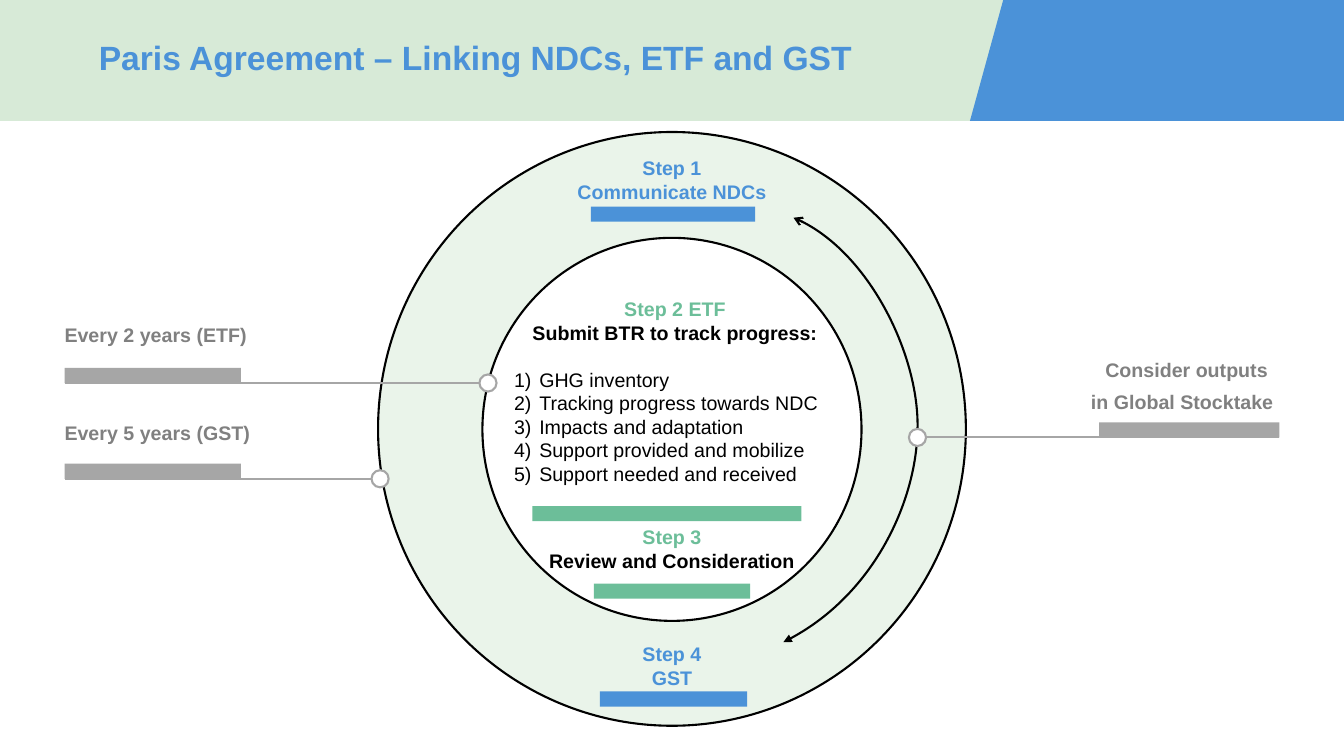
from lxml import etree
from pptx import Presentation, util as u
from pptx.dml.color import RGBColor
from pptx.enum import shapes, text
from pptx.oxml.ns import qn

WIDTH, HEIGHT, HEADER = 13.33, 7.5, 1.2
CENTER = WIDTH / 2
BAR, DOT = 0.15, 0.17
BLUE, GREEN, PALE = "4B92D8", "6CBE99", "D7EAD7"
GRAY, LABEL, BLACK, WHITE = "A6A6A6", "808080", "000000", "FFFFFF"
LEFT, MID, RIGHT = text.PP_ALIGN.LEFT, text.PP_ALIGN.CENTER, text.PP_ALIGN.RIGHT
RECT, OVAL = shapes.MSO_SHAPE.RECTANGLE, shapes.MSO_SHAPE.OVAL

TITLE = "Paris Agreement – Linking NDCs, ETF and GST"
BANNER = [(9.95, 0), (WIDTH, 0), (WIDTH, HEADER), (9.62, HEADER)]
RINGS = [(1.31, 5.83, 5.89, PALE, 50), (2.36, 3.76, 3.8, WHITE, 100)]
STEPS = [
    (1.5, [("Step 1", BLUE), ("Communicate NDCs", BLUE)]),
    (5.16, [("Step 3", GREEN), ("Review and Consideration", BLACK)]),
    (6.32, [("Step 4", BLUE), ("GST", BLUE)]),
]
BARS = [
    (5.86, 2.05, 1.63, BLUE),
    (5.28, 5.02, 2.67, GREEN),
    (5.89, 5.79, 1.55, GREEN),
    (5.95, 6.86, 1.46, BLUE),
]
ETF_HEADING = [("Step 2 ETF", GREEN), ("Submit BTR to track progress:", BLACK)]
ETF_ITEMS = [
    "GHG inventory",
    "Tracking progress towards NDC",
    "Impacts and adaptation",
    "Support provided and mobilize",
    "Support needed and received",
]
CALLOUTS = [
    (["Every 2 years (ETF)"], (0.64, 3.2, 2.1, 0.29), LEFT, 0.64, 1.75, 3.8, 4.84),
    (["Every 5 years (GST)"], (0.64, 4.17, 2.1, 0.29), LEFT, 0.64, 1.75, 4.75, 3.77),
    (["Consider outputs ", "in Global Stocktake"], (10.58, 3.54, 2.05, 0.61), RIGHT, 10.9, 1.79, 4.34, 9.1),
]
ARC = [(7.87, 2.16), (8.6, 2.46), (9.12, 3.54), (9.1, 4.26), (9.09, 4.97), (8.65, 5.94), (7.77, 6.37)]

prs = Presentation()
prs.slide_width, prs.slide_height = u.Inches(WIDTH), u.Inches(HEIGHT)
slide = prs.slides.add_slide(prs.slide_layouts[6])


def color(value):
    return RGBColor.from_string(value)


def inches(values):
    return [u.Inches(v) for v in values]


def style(sp, fill=None, line=None):
    sp.shadow.inherit = False
    if fill:
        sp.fill.solid()
        sp.fill.fore_color.rgb = color(fill)
    else:
        sp.fill.background()
    if line:
        sp.line.color.rgb = color(line)
        sp.line.width = u.Pt(1.5)
    else:
        sp.line.fill.background()
    return sp


def shape(kind, box, fill, line=None):
    return style(slide.shapes.add_shape(kind, *inches(box)), fill, line)


def outline(points, close):
    (x, y), *rest = [inches(point) for point in points]
    builder = slide.shapes.build_freeform(x, y)
    builder.add_line_segments(rest, close=close)
    return builder.convert_to_shape()


def text_box(box, insets=(0.1, 0.05, 0.1, 0.05), anchor=text.MSO_ANCHOR.TOP):
    tf = slide.shapes.add_textbox(*inches(box)).text_frame
    tf.word_wrap = True
    tf.vertical_anchor = anchor
    tf.margin_left, tf.margin_top, tf.margin_right, tf.margin_bottom = inches(insets)
    return tf


def write(tf, words, fill, align=LEFT, size=14, bold=True, numbered=False):
    p = tf.paragraphs[0]
    if p.runs:
        p = tf.add_paragraph()
    if numbered:
        pr = p._p.get_or_add_pPr()
        pr.set("marL", str(u.Inches(0.25)))
        pr.set("indent", str(-u.Inches(0.25)))
        etree.SubElement(pr, qn("a:buFont"), typeface="+mj-lt")
        etree.SubElement(pr, qn("a:buAutoNum"), type="arabicParenR")
    p.add_run().text = words
    p.alignment = align
    p.font.name, p.font.size, p.font.bold = "Arial", u.Pt(size), bold
    p.font.color.rgb = color(fill)
    return p


def draw_header():
    shape(RECT, (0, 0, WIDTH, HEADER), PALE)
    style(outline(BANNER, True), BLUE)
    tf = text_box((0.98, 0.29, 8.39, 0.61), (0, 0, 0, 0), text.MSO_ANCHOR.MIDDLE)
    write(tf, TITLE, BLUE, size=24).line_spacing = 0.9


def draw_rings():
    for top, width, height, fill, opacity in RINGS:
        sp = shape(OVAL, (CENTER - width / 2, top, width, height), fill, BLACK)
        tint = sp._element.spPr.find(qn("a:solidFill"))[0]
        etree.SubElement(tint, qn("a:alpha"), val=str(opacity * 1000))


def draw_steps():
    for left, top, width, fill in BARS:
        shape(RECT, (left, top, width, BAR), fill)
    for top, lines in STEPS:
        tf = text_box((CENTER - 1.5, top, 3, 0.57))
        for words, fill in lines:
            write(tf, words, fill, MID)
    tf = text_box((5, 2.9, 3.39, 1.99))
    for words, fill in ETF_HEADING:
        write(tf, words, fill, MID)
    items = [write(tf, words, BLACK, bold=False, numbered=True) for words in ETF_ITEMS]
    items[0].space_before = u.Pt(16.5)


def draw_arc():
    sp = style(outline(ARC, False), line=BLACK)
    curve = sp._element.spPr.find(".//" + qn("a:path"))
    segments = curve.findall(qn("a:lnTo"))
    for start in range(0, len(segments), 3):
        bezier = etree.SubElement(curve, qn("a:cubicBezTo"))
        for segment in segments[start:start + 3]:
            bezier.append(segment[0])
            curve.remove(segment)
    ln = sp.line._get_or_add_ln()
    etree.SubElement(ln, qn("a:headEnd"), type="arrow")
    etree.SubElement(ln, qn("a:tailEnd"), type="triangle")


def draw_callouts():
    for lines, box, align, left, width, base, dot in CALLOUTS:
        tf = text_box(box, (0, 0, 0, 0.05), text.MSO_ANCHOR.BOTTOM)
        for words in lines:
            p = write(tf, words, LABEL, align)
            if len(lines) > 1:
                p.space_after = u.Pt(6)
        shape(RECT, (left, base - BAR, width, BAR), GRAY)
        start = left if dot > left else left + width
        line = slide.shapes.add_connector(shapes.MSO_CONNECTOR.STRAIGHT, *inches((start, base, dot, base)))
        line.line.color.rgb = color(GRAY)
        line.line.width = u.Pt(1.5)
        etree.SubElement(line._element.spPr, qn("a:effectLst"))
        shape(OVAL, (dot - DOT / 2, base - DOT / 2, DOT, DOT), WHITE, GRAY)


def main():
    draw_header()
    draw_rings()
    draw_steps()
    draw_arc()
    draw_callouts()
    prs.save("out.pptx")


if __name__ == "__main__":
    main()
